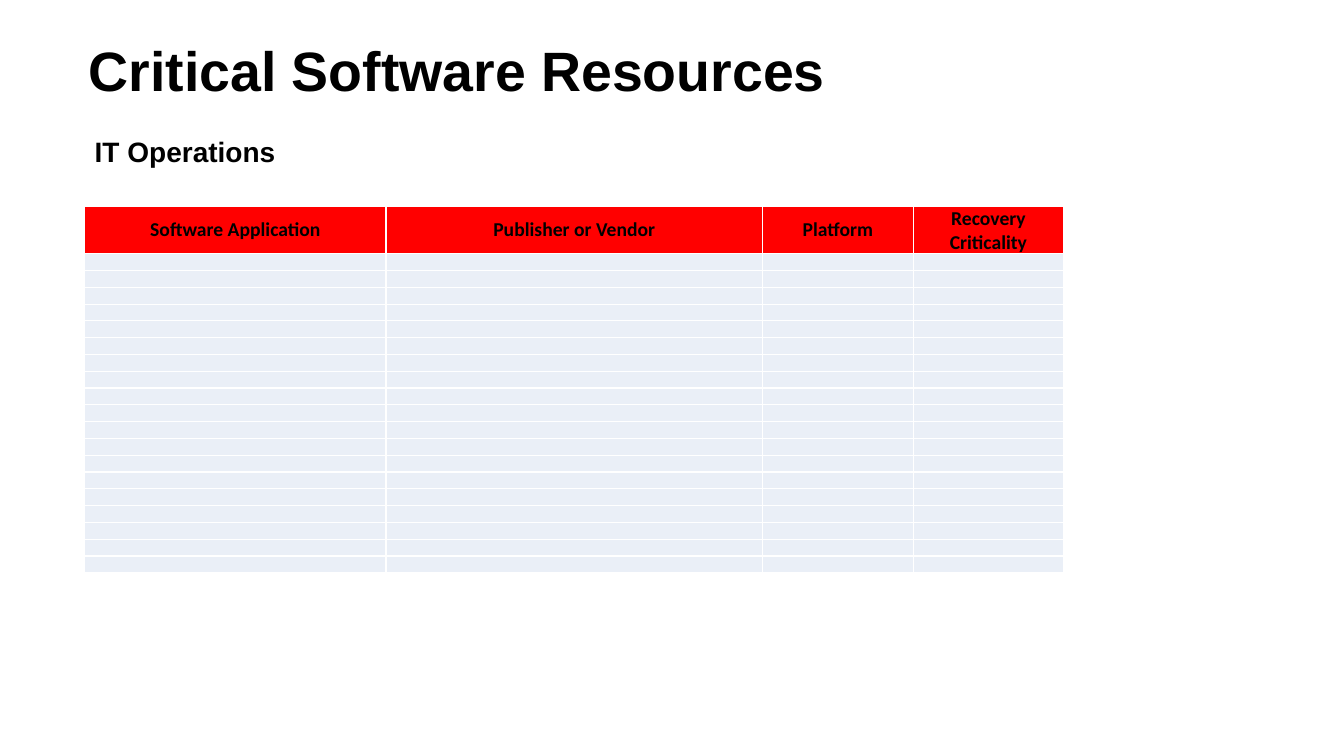
from dataclasses import dataclass

from lxml import etree
from pptx import Presentation
from pptx.dml.color import RGBColor
from pptx.enum.text import MSO_ANCHOR, PP_ALIGN
from pptx.oxml.ns import qn
from pptx.slide import Slide
from pptx.table import Table, _Cell
from pptx.text.text import TextFrame
from pptx.util import Inches, Pt

MIDDLE, TOP = MSO_ANCHOR.MIDDLE, MSO_ANCHOR.TOP
LEFT, CENTER, JUSTIFY = PP_ALIGN.LEFT, PP_ALIGN.CENTER, PP_ALIGN.JUSTIFY

COLORS = {"text": "000000", "header": "FF0000", "row": "EAEFF7", "border": "FFFFFF"}

SLIDE_WIDTH, SLIDE_HEIGHT = Inches(13.333), Inches(7.5)
GRID_COLUMN, GRID_ROW = SLIDE_WIDTH / 160, SLIDE_HEIGHT / 90

BLANK_LAYOUT = 6
EMPTY_ROWS = 19
EMPTY_ROW_HEIGHT = 2
HEADER_HEIGHT = 5.5
SHARE_WIDTH = 17.93  # grid columns per unit of column share
TABLE_LEFT, TABLE_TOP = 10.1, 24.6
EMPTY_TEXT_SIZE = 8


@dataclass(frozen=True)
class Heading:
    text: str
    left: float
    top: float
    width: float
    height: float
    size: float
    align: PP_ALIGN
    anchor: MSO_ANCHOR


@dataclass(frozen=True)
class Column:
    title: str
    share: float


HEADINGS = (
    Heading("Critical Software Resources", 9.4, 4.1, 138, 8.4, 39.6, LEFT, MIDDLE),
    Heading("IT Operations", 10.1, 15.4, 136.5, 5.2, 20, JUSTIFY, TOP),
)
COLUMNS = (
    Column("Software Application", 2),
    Column("Publisher or Vendor", 2.5),
    Column("Platform", 1),
    Column("Recovery Criticality", 1),
)


def across(columns: float) -> int:
    return round(columns * GRID_COLUMN)


def down(rows: float) -> int:
    return round(rows * GRID_ROW)


def write(frame: TextFrame, text: str, font_name: str, size: float, align: PP_ALIGN) -> None:
    paragraph = frame.paragraphs[0]
    paragraph.alignment = align
    run = paragraph.add_run()
    run.text = text
    for attribute, value in {"name": font_name, "size": Pt(size), "bold": True}.items():
        setattr(run.font, attribute, value)
    run.font.color.rgb = RGBColor.from_string(COLORS["text"])


def add_heading(slide: Slide, heading: Heading) -> None:
    box = slide.shapes.add_textbox(
        across(heading.left), down(heading.top), across(heading.width), down(heading.height)
    )
    box.text_frame.word_wrap = True
    box.text_frame.vertical_anchor = heading.anchor
    write(box.text_frame, heading.text, "Arial", heading.size, heading.align)


def format_cell(cell: _Cell, fill: str) -> None:
    cell_format = {
        "margin_left": Inches(0.07),
        "margin_right": Inches(0.07),
        "margin_top": 0,
        "margin_bottom": 0,
        "vertical_anchor": MIDDLE,
    }
    for attribute, value in cell_format.items():
        setattr(cell, attribute, value)
    properties = cell._tc.get_or_add_tcPr()
    for side in ("a:lnL", "a:lnR", "a:lnT", "a:lnB"):
        border = etree.SubElement(properties, qn(side), w=str(Pt(1)))
        border_fill = etree.SubElement(border, qn("a:solidFill"))
        etree.SubElement(border_fill, qn("a:srgbClr"), val=COLORS["border"])
    cell.fill.solid()
    cell.fill.fore_color.rgb = RGBColor.from_string(COLORS[fill])


def shrink_empty_line(cell: _Cell) -> None:
    """Keep the blank line of an empty cell lower than its row."""
    paragraph = cell.text_frame.paragraphs[0]._p
    etree.SubElement(paragraph, qn("a:endParaRPr"), sz=str(EMPTY_TEXT_SIZE * 100))


def fill_table(software: Table) -> None:
    software.first_row = software.horz_banding = False
    for index, column in enumerate(COLUMNS):
        software.columns[index].width = across(column.share * SHARE_WIDTH)
        header = software.cell(0, index)
        format_cell(header, "header")
        write(header.text_frame, column.title, "Calibri", 14, CENTER)
        for row in range(1, EMPTY_ROWS + 1):
            entry = software.cell(row, index)
            format_cell(entry, "row")
            shrink_empty_line(entry)
    for index, row in enumerate(software.rows):
        row.height = down(EMPTY_ROW_HEIGHT if index else HEADER_HEIGHT)


def main() -> None:
    presentation = Presentation()
    presentation.slide_width, presentation.slide_height = SLIDE_WIDTH, SLIDE_HEIGHT
    slide = presentation.slides.add_slide(presentation.slide_layouts[BLANK_LAYOUT])
    for heading in HEADINGS:
        add_heading(slide, heading)
    software = slide.shapes.add_table(
        EMPTY_ROWS + 1,
        len(COLUMNS),
        across(TABLE_LEFT),
        down(TABLE_TOP),
        across(SHARE_WIDTH * sum(column.share for column in COLUMNS)),
        down(HEADER_HEIGHT + EMPTY_ROWS * EMPTY_ROW_HEIGHT),
    ).table
    fill_table(software)
    presentation.save("out.pptx")


if __name__ == "__main__":
    main()
